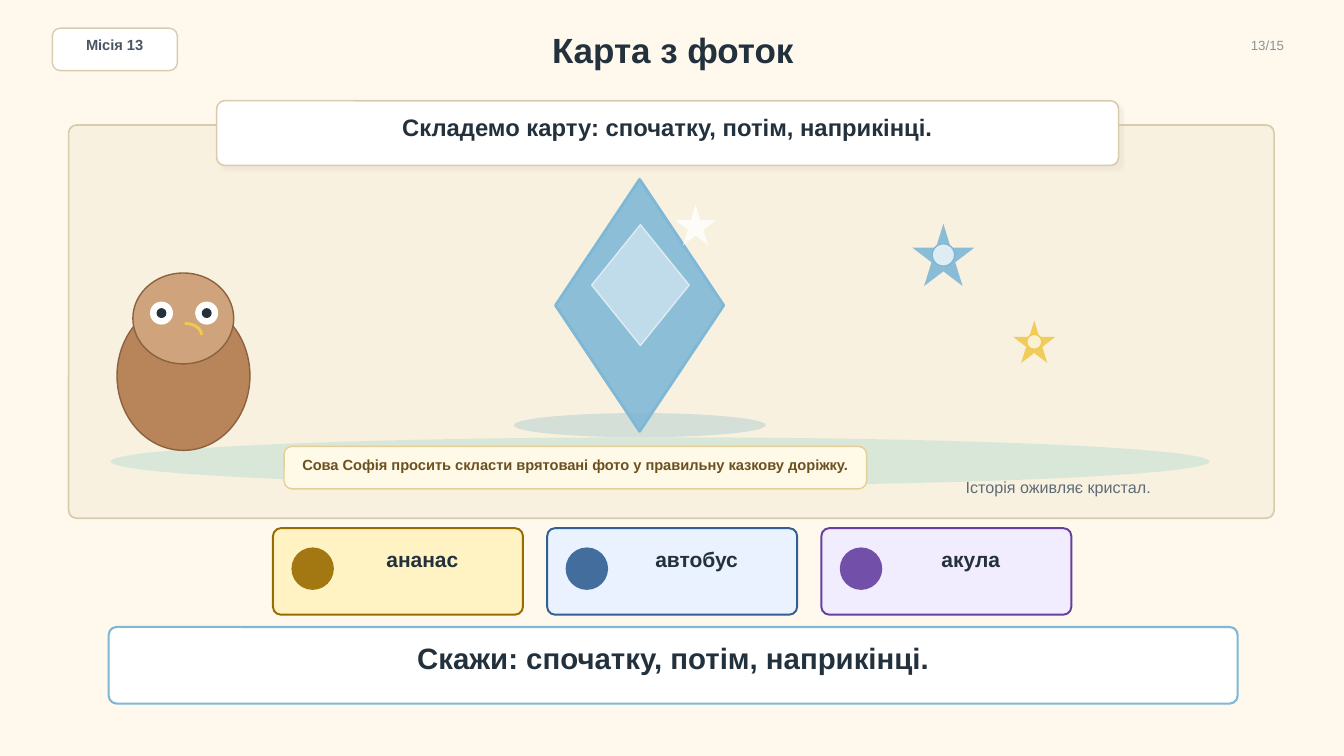
"""Build the story map slide with an owl, a crystal and three word cards."""
from dataclasses import dataclass

import lxml.etree
import pptx
import pptx.dml.color
import pptx.enum.shapes
import pptx.enum.text
import pptx.oxml.ns
import pptx.util

Cm = pptx.util.Cm
Pt = pptx.util.Pt
Kind = pptx.enum.shapes.MSO_SHAPE
Align = pptx.enum.text.PP_ALIGN
qn = pptx.oxml.ns.qn


@dataclass(frozen=True)
class Theme:
    """Colours, type sizes and the shared corner radius in centimetres."""
    font: str = "Arial"
    page: str = "FFF9ED"
    white: str = "FFFFFF"
    ink: str = "23313D"
    badge_ink: str = "4B5563"
    number_ink: str = "8A929A"
    caption_ink: str = "5E6C78"
    hint_ink: str = "6B5120"
    hint_fill: str = "FFF9E8"
    hint_line: str = "E4CF98"
    border: str = "D9CBAE"
    scene: str = "F8F1DF"
    ground: str = "D7E7D8"
    crystal_shade: str = "C9D9D5"
    banner_shadow: str = "C8C1B0"
    blue: str = "7FB7D6"
    yellow: str = "F2C94C"
    owl_body: str = "B8845A"
    owl_head: str = "CFA47C"
    owl_line: str = "8C623E"
    title_size: float = 25
    prompt_size: float = 21
    banner_size: float = 17
    card_size: float = 15
    caption_size: float = 11.5
    small_size: float = 10.5
    number_size: float = 9.5
    radius: float = 0.2


THEME = Theme()
CARDS = (
    ("ананас", "FFF3C4", "9A6B00"),
    ("автобус", "EAF2FF", "315F93"),
    ("акула", "F2ECFF", "6540A0"),
)


def paint(fill, color, opacity=100):
    """Set a solid fill with an opacity in percent."""
    fill.solid()
    fill.fore_color.rgb = pptx.dml.color.RGBColor.from_string(color)
    if opacity < 100:
        color_element = fill._xPr.find(qn("a:solidFill"))[0]
        lxml.etree.SubElement(color_element, qn("a:alpha"), val=str(opacity * 1000))


def add_figure(slide, kind, box, fill=None, line=None, width=1, opacity=100, line_opacity=100):
    """Add a preset shape; box is left, top, width, height in centimetres."""
    shape = slide.shapes.add_shape(kind, *map(Cm, box))
    shape.shadow.inherit = False
    if fill:
        paint(shape.fill, fill, opacity)
    else:
        shape.fill.background()
    if line:
        paint(shape.line.fill, line, line_opacity)
        shape.line.width = Pt(width)
    else:
        shape.line.fill.background()
    return shape


def add_panel(slide, box, fill, line, width=1):
    """Add a rounded panel with the shared corner radius."""
    shape = add_figure(slide, Kind.ROUNDED_RECTANGLE, box, fill, line, width)
    shape.adjustments[0] = THEME.radius / min(box[2:])
    return shape


def add_disc(slide, center_x, center_y, size, fill, line=None, opacity=100):
    """Add a circle around a centre point."""
    box = (center_x - size / 2, center_y - size / 2, size, size)
    add_figure(slide, Kind.OVAL, box, fill, line, opacity=opacity)


def add_label(slide, box, text, size, color, bold=True, align=Align.CENTER):
    """Add one line of text without insets, centred vertically."""
    frame = slide.shapes.add_textbox(*map(Cm, box)).text_frame
    frame.word_wrap = True
    frame.margin_left = frame.margin_right = frame.margin_top = frame.margin_bottom = 0
    frame.vertical_anchor = pptx.enum.text.MSO_ANCHOR.MIDDLE
    paragraph = frame.paragraphs[0]
    paragraph.text = text
    paragraph.alignment = align
    paragraph.font.name = THEME.font
    paragraph.font.size = Pt(size)
    paragraph.font.bold = bold
    paragraph.font.color.rgb = pptx.dml.color.RGBColor.from_string(color)


def add_shadow(shape, color, opacity, blur, distance, angle):
    """Cast an outer shadow from a shape."""
    effects = shape._element.spPr.find(qn("a:effectLst"))
    shadow = lxml.etree.SubElement(
        effects, qn("a:outerShdw"), blurRad=str(Pt(blur)), dist=str(Pt(distance)),
        dir=str(angle * 60000), algn="bl", rotWithShape="0")
    shade = lxml.etree.SubElement(shadow, qn("a:srgbClr"), val=color)
    lxml.etree.SubElement(shade, qn("a:alpha"), val=str(opacity * 1000))


def add_header(slide):
    """Add the mission badge, the title and the page number."""
    add_panel(slide, (1.32, 0.71, 3.15, 1.07), THEME.white, THEME.border)
    add_label(slide, (1.57, 0.94, 2.64, 0.38), "Місія 13", THEME.small_size, THEME.badge_ink)
    add_label(slide, (5.08, 0.64, 23.75, 1.22), "Карта з фоток", THEME.title_size, THEME.ink)
    add_label(slide, (30.53, 0.94, 1.83, 0.41), "13/15", THEME.number_size, THEME.number_ink,
              bold=False, align=Align.RIGHT)


def add_owl(slide):
    """Draw the owl from ovals and an arc."""
    add_figure(slide, Kind.OVAL, (2.95, 7.59, 3.35, 3.76), THEME.owl_body, THEME.owl_line)
    add_figure(slide, Kind.OVAL, (3.35, 6.88, 2.54, 2.29), THEME.owl_head, THEME.owl_line)
    for eye_x in (4.07, 5.21):
        add_disc(slide, eye_x, 7.89, 0.58, THEME.white)
        add_disc(slide, eye_x, 7.89, 0.25, THEME.ink)
    add_figure(slide, Kind.ARC, (4.24, 8.15, 0.84, 0.58), line=THEME.yellow, width=2)


def add_crystal(slide):
    """Draw the crystal with its ground shade, facet and spark."""
    add_figure(slide, Kind.OVAL, (12.95, 10.41, 6.35, 0.61), THEME.crystal_shade, opacity=75)
    add_figure(slide, Kind.DIAMOND, (14, 4.52, 4.24, 6.35), THEME.blue, THEME.blue, 2, opacity=88)
    add_figure(slide, Kind.DIAMOND, (14.91, 5.66, 2.46, 3.05), THEME.white, THEME.white,
               opacity=45, line_opacity=60)
    add_figure(slide, Kind.STAR_5_POINT, (17.02, 5.16, 1.02, 1.02), THEME.white, opacity=82)


def add_flower(slide, left, top, size, color):
    """Draw a star with a pale round core."""
    add_figure(slide, Kind.STAR_5_POINT, (left, top, size, size), color, opacity=90)
    add_disc(slide, left + size / 2, top + size / 2, size * 0.36, THEME.white, color, opacity=72)


def add_card(slide, left, top, word, fill, accent):
    """Add a word card with an accent dot."""
    add_panel(slide, (left, top, 6.3, 2.18), fill, accent, 1.4)
    add_disc(slide, left + 1, top + 1.02, 1.07, accent, opacity=90)
    add_label(slide, (left + 1.68, top + 0.36, 4.17, 0.86), word, THEME.card_size, THEME.ink)


def main():
    """Build and save the slide."""
    presentation = pptx.Presentation()
    presentation.slide_width = Cm(33.87)
    presentation.slide_height = Cm(19.05)
    slide = presentation.slides.add_slide(presentation.slide_layouts[6])
    paint(slide.background.fill, THEME.page)

    add_header(slide)
    add_panel(slide, (1.73, 3.15, 30.38, 9.91), THEME.scene, THEME.border, 1.2)
    add_figure(slide, Kind.OVAL, (2.79, 11.02, 27.69, 1.22), THEME.ground, opacity=92)
    add_owl(slide)
    add_crystal(slide)
    add_flower(slide, 22.99, 5.64, 1.57, THEME.blue)
    add_flower(slide, 25.53, 8.08, 1.07, THEME.yellow)

    banner = add_panel(slide, (5.46, 2.54, 22.73, 1.63), THEME.white, THEME.border, 1.1)
    add_shadow(banner, THEME.banner_shadow, opacity=16, blur=1, distance=4, angle=45)
    add_label(slide, (6.05, 2.87, 21.54, 0.66), "Складемо карту: спочатку, потім, наприкінці.",
              THEME.banner_size, THEME.ink)
    add_panel(slide, (7.16, 11.25, 14.68, 1.07), THEME.hint_fill, THEME.hint_line)
    add_label(slide, (7.57, 11.48, 13.87, 0.46),
              "Сова Софія просить скласти врятовані фото у правильну казкову доріжку.",
              THEME.small_size, THEME.hint_ink)
    add_panel(slide, (2.74, 15.8, 28.45, 1.93), THEME.white, THEME.blue, 1.5)
    add_label(slide, (3.4, 16.23, 27.13, 0.71), "Скажи: спочатку, потім, наприкінці.",
              THEME.prompt_size, THEME.ink)

    for index, (word, fill, accent) in enumerate(CARDS):
        add_card(slide, 6.88 + index * 6.91, 13.31, word, fill, accent)
    add_label(slide, (22.86, 11.99, 7.62, 0.56), "Історія оживляє кристал.",
              THEME.caption_size, THEME.caption_ink, bold=False)
    presentation.save("out.pptx")


if __name__ == "__main__":
    main()
